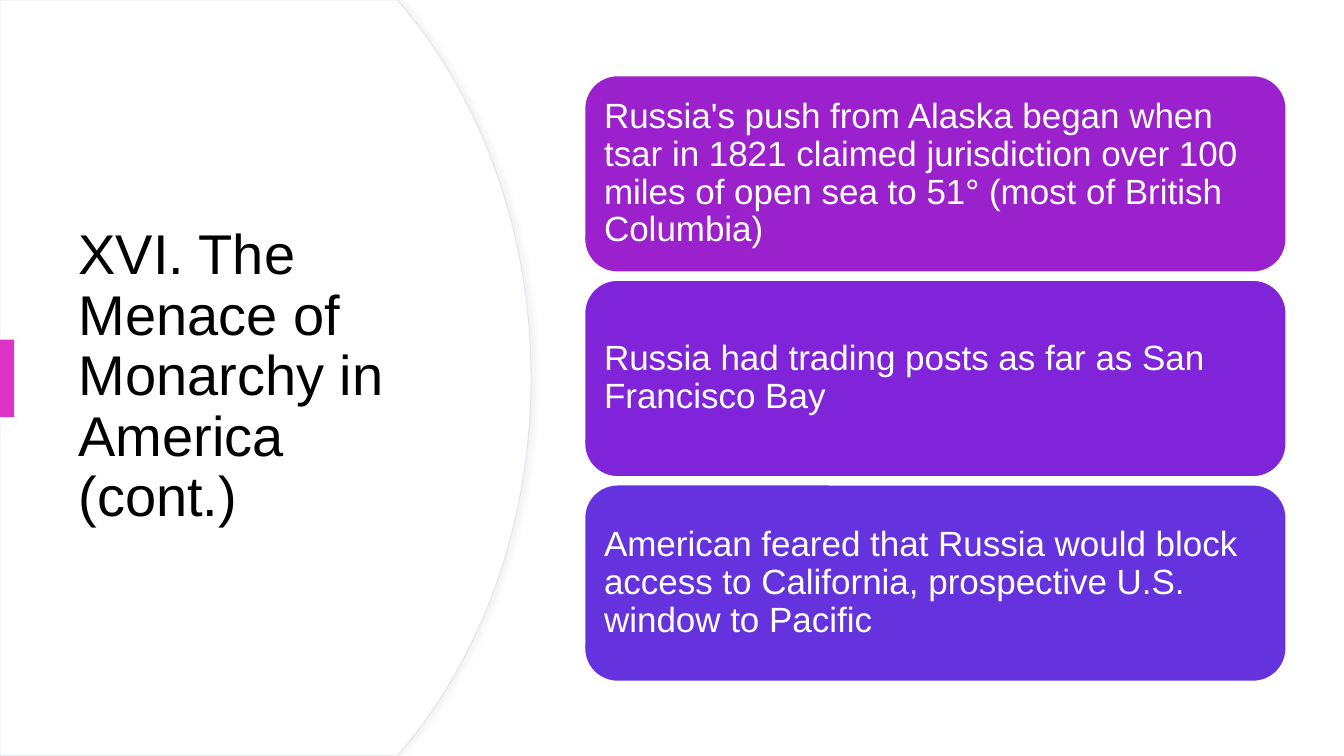
from lxml.etree import SubElement
from pptx import Presentation
from pptx.dml.color import RGBColor
from pptx.enum.shapes import MSO_SHAPE as Preset
from pptx.enum.text import MSO_ANCHOR as Anchor, PP_ALIGN as Align
from pptx.oxml.ns import qn
from pptx.util import Pt

# Content
TITLE = "XVI. The Menace of Monarchy in\vAmerica (cont.)"
CARDS = [
    ("Russia's push from Alaska began when tsar in 1821 claimed jurisdiction "
     "over 100 miles of open sea to 51° (most of British Columbia)", "9A21CB"),
    ("Russia had trading posts as far as San Francisco Bay", "8024DA"),
    ("American feared that Russia would block access to California, "
     "prospective U.S. window to Pacific", "6533DD"),
]


class Theme:
    font = "Arial"
    title_size, card_size = 40, 25
    dark, light, accent = "000000", "FFFFFF", "DD33C7"
    outline, shadow = "E3E4EF", "D9D9D9"


# Layout, in points
SLIDE_WIDTH, SLIDE_HEIGHT = 960, 540
CARD_LEFT, CARD_TOP, CARD_WIDTH, CARD_HEIGHT = 417.6, 54, 501.12, 140.4
CARD_PITCH = 146.16
# Upper half of the panel's edge; the lower half mirrors it
EDGE_TOP = (283.7, 0)
EDGE_CURVE = [(288.6, 5.6), (344.9, 73.4), (379.4, 167), (379.4, 270)]
CURVE_STEPS = 40


def write(shape, text, size, color, space_after=0):
    frame = shape.text_frame
    frame.word_wrap = True
    frame.vertical_anchor = Anchor.MIDDLE
    frame.margin_left = frame.margin_right = Pt(7.2)
    frame.margin_top = frame.margin_bottom = Pt(7.2)
    paragraph = frame.paragraphs[0]
    paragraph.text = text
    paragraph.alignment = Align.LEFT
    paragraph.line_spacing = 0.9
    paragraph.space_before = Pt(0)
    paragraph.space_after = Pt(space_after)
    for run in paragraph.runs:
        run.font.name = Theme.font
        run.font.size = Pt(size)
        run.font.color.rgb = RGBColor.from_string(color)


def paint(shape, fill, line=None, width=1):
    shape.shadow.inherit = False
    shape.fill.solid()
    shape.fill.fore_color.rgb = RGBColor.from_string(fill)
    if line:
        shape.line.color.rgb = RGBColor.from_string(line)
        shape.line.width = Pt(width)
    else:
        shape.line.fill.background()


def add_soft_shadow(shape):
    effects = shape._element.spPr.find(qn("a:effectLst"))
    shadow = SubElement(effects, qn("a:outerShdw"), blurRad=str(Pt(4)),
                        dist=str(Pt(3)), dir="0", algn="l", rotWithShape="0")
    color = SubElement(shadow, qn("a:srgbClr"), val=Theme.shadow)
    SubElement(color, qn("a:alpha"), val="30000")


def curve_point(t):
    weights = ((1 - t) ** 3, 3 * t * (1 - t) ** 2, 3 * t * t * (1 - t), t ** 3)
    return tuple(sum(weight * point[axis]
                     for weight, point in zip(weights, EDGE_CURVE))
                 for axis in (0, 1))


def add_panel(shapes):
    upper = [EDGE_TOP] + [curve_point(step / CURVE_STEPS)
                          for step in range(CURVE_STEPS + 1)]
    lower = [(x, SLIDE_HEIGHT - y) for x, y in reversed(upper[:-1])]
    outline = upper + lower + [(0, SLIDE_HEIGHT)]
    builder = shapes.build_freeform(0, 0)
    builder.add_line_segments([(Pt(x), Pt(y)) for x, y in outline], close=True)
    panel = builder.convert_to_shape()
    paint(panel, Theme.light, Theme.outline, 0.75)
    add_soft_shadow(panel)


def main():
    presentation = Presentation()
    presentation.slide_width = Pt(SLIDE_WIDTH)
    presentation.slide_height = Pt(SLIDE_HEIGHT)
    slide = presentation.slides.add_slide(presentation.slide_layouts[5])
    shapes = slide.shapes

    # Curved panel
    add_panel(shapes)

    # Title, brought in front of the panel
    title = shapes.title
    title.left, title.top = Pt(48.96), Pt(91.44)
    title.width, title.height = Pt(283.68), Pt(356.4)
    write(title, TITLE, Theme.title_size, Theme.dark)
    shapes._spTree.append(title._element)

    # Accent bar
    accent = shapes.add_shape(Preset.RECTANGLE, 0, Pt(242.64),
                              Pt(10.08), Pt(55.44))
    paint(accent, Theme.accent)

    # Cards
    for index, (text, color) in enumerate(CARDS):
        card = shapes.add_shape(Preset.ROUNDED_RECTANGLE, Pt(CARD_LEFT),
                                Pt(CARD_TOP + index * CARD_PITCH),
                                Pt(CARD_WIDTH), Pt(CARD_HEIGHT))
        paint(card, color, Theme.light)
        write(card, text, Theme.card_size, Theme.light)

    presentation.save("out.pptx")


if __name__ == "__main__":
    main()
